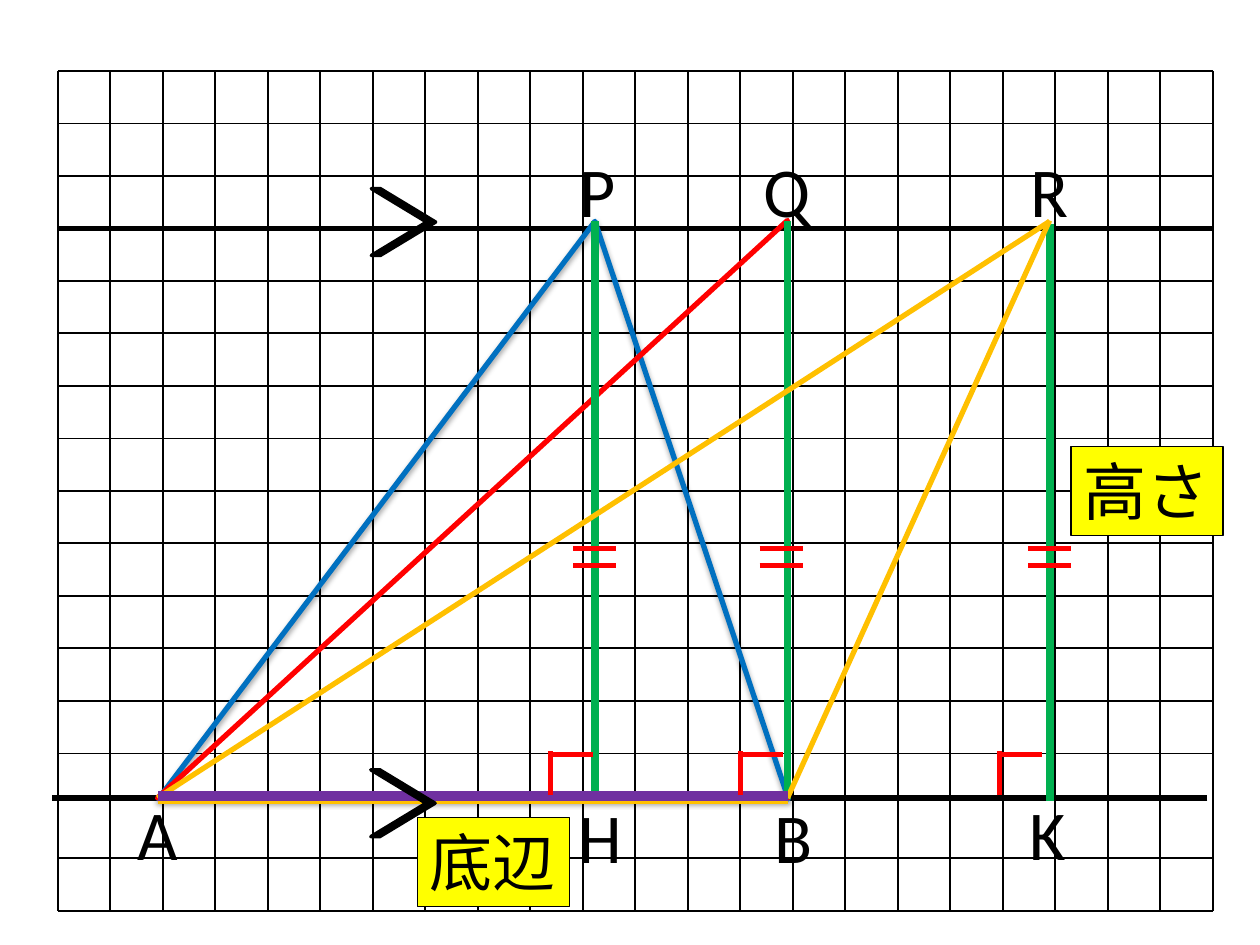
from typing import NamedTuple

from lxml.etree import SubElement
from pptx import Presentation
from pptx.dml.color import RGBColor
from pptx.enum.shapes import MSO_CONNECTOR as Connector, MSO_SHAPE as Preset
from pptx.enum.text import MSO_ANCHOR as Anchor, MSO_AUTO_SIZE as AutoSize, PP_ALIGN as Align
from pptx.oxml.ns import qn
from pptx.util import Pt

COLORS = {
    "black": "000000", "blue": "0070C0", "red": "FF0000", "green": "00B050",
    "orange": "FFC000", "purple": "7030A0", "yellow": "FFFF00",
}
FONT = "Calibri"
STEP, LEFT, TOP, COLUMNS, ROWS = 30, 33, 40.5, 22, 16
RIGHT, BOTTOM = LEFT + COLUMNS * STEP, TOP + ROWS * STEP
ORIGIN_COLUMN, PARALLEL_ROW, BASE_ROW = 2, 3, 14


class Segment(NamedTuple):
    x1: float
    y1: float
    x2: float
    y2: float
    color: str = "black"
    weight: float = 1


class Outline(NamedTuple):
    preset: Preset
    left: float
    top: float
    width: float
    height: float
    adjustment: float
    line: str
    weight: float
    fill: str | None = None
    shadowed: bool = False


class Vertex(NamedTuple):
    letter: str
    left: float
    top: float
    width: float


class Tag(NamedTuple):
    wording: str
    left: float
    top: float


def rgb(name: str) -> RGBColor:
    return RGBColor.from_string(COLORS[name])


def draw_segment(slide, segment: Segment) -> None:
    ends = [Pt(value) for value in segment[:4]]
    connector = slide.shapes.add_connector(Connector.STRAIGHT, *ends)
    connector.line.color.rgb = rgb(segment.color)
    connector.line.width = Pt(segment.weight)
    SubElement(connector._element.spPr, qn("a:effectLst"))


def add_shadow(shape) -> None:
    effects = shape._element.spPr.find(qn("a:effectLst"))
    shadow = SubElement(effects, qn("a:outerShdw"), blurRad=str(Pt(3.1)),
                        dist=str(Pt(1.6)), dir="5400000", rotWithShape="0")
    tint = SubElement(shadow, qn("a:srgbClr"), val=COLORS["black"])
    SubElement(tint, qn("a:alpha"), val="38000")


def draw_preset(slide, preset: Preset, box: tuple, line: str, weight: float, fill: str | None):
    shape = slide.shapes.add_shape(preset, *[Pt(value) for value in box])
    shape.shadow.inherit = False
    shape.line.color.rgb = rgb(line)
    shape.line.width = Pt(weight)
    if fill:
        shape.fill.solid()
        shape.fill.fore_color.rgb = rgb(fill)
    else:
        shape.fill.background()
    return shape


def draw_outline(slide, outline: Outline) -> None:
    shape = draw_preset(slide, outline.preset, outline[1:5], outline.line,
                        outline.weight, outline.fill)
    shape.adjustments[0] = outline.adjustment
    if outline.shadowed:
        add_shadow(shape)


def write(shape, wording: str, size: float) -> None:
    frame = shape.text_frame
    frame.word_wrap = False
    frame.auto_size = AutoSize.SHAPE_TO_FIT_TEXT
    frame.vertical_anchor = Anchor.TOP
    paragraph = frame.paragraphs[0]
    paragraph.text = wording
    paragraph.alignment = Align.LEFT
    paragraph.font.name = FONT
    paragraph.font.size = Pt(size)
    paragraph.font.color.rgb = rgb("black")


def draw_vertex(slide, vertex: Vertex) -> None:
    box = slide.shapes.add_textbox(Pt(vertex.left), Pt(vertex.top), Pt(vertex.width), Pt(55.74))
    write(box, vertex.letter, 40)


def draw_tag(slide, tag: Tag) -> None:
    box = draw_preset(slide, Preset.RECTANGLE, (tag.left, tag.top, 86.9, 50.9),
                      "black", 0.75, "yellow")
    write(box, tag.wording, 36)


def grid_segments() -> list[Segment]:
    columns = [LEFT + STEP * i for i in range(COLUMNS + 1)]
    rows = [TOP + STEP * i for i in range(ROWS + 1)]
    base_ticks = [Segment(x, 454.5, x, 466.5)
                  for i, x in enumerate(columns[1:16], 1) if i != ORIGIN_COLUMN]
    side_ticks = [Segment(87, y, 99, y)
                  for i, y in enumerate(rows[3:16], 3) if i != BASE_ROW]
    across = [Segment(RIGHT, y, LEFT, y, "black", 3 if i == PARALLEL_ROW else 1)
              for i, y in enumerate(rows) if i != BASE_ROW]
    down = [Segment(x, TOP, x, BOTTOM) for x in columns]
    return base_ticks + side_ticks + across + down + [Segment(690, 456, 30, 456, "black", 3)]


def equal_marks(center: float) -> list[Segment]:
    return [Segment(center - 12.25, y, center + 12.25, y, "red", 3) for y in (313.4, 323.2)]


def right_angle(left: float) -> list[Segment]:
    return [Segment(left, 431.2, left + 24.5, 431.2, "red", 3),
            Segment(left, 454.5, left, 429.3, "red", 3)]


TRIANGLES = [
    Outline(Preset.ISOSCELES_TRIANGLE, 90.5, 126.5, 360, 330, 0.693, "blue", 3, shadowed=True),
    Outline(Preset.ISOSCELES_TRIANGLE, 90, 126, 360, 330, 1, "red", 3),
]
CHEVRONS = [
    Outline(Preset.CHEVRON, left, top, 36.7, 38.2, 0.861, "black", 2, "black")
    for left, top in ((212.2, 107.8), (211.9, 439.9))
]
HEIGHTS = [
    Segment(x, top, x, top + 330, "green", 4.5)
    for x, top in ((340, 126.5), (450, 126.5), (599.8, 128))
]
SIDES = [
    Segment(90, 456, 599.8, 126.5, "orange", 3),
    Segment(599.8, 126, 450, 456, "orange", 3),
    Segment(90, 457.8, 450, 457.8, "orange", 3),
    Segment(90.5, 455, 450.5, 455, "purple", 6),
]
VERTICES = [
    Vertex("P", 324, 80.5, 35.3), Vertex("Q", 429.1, 80.5, 41.8), Vertex("R", 581.8, 80.5, 36.7),
    Vertex("A", 71.3, 448, 38.2), Vertex("B", 435.6, 450, 36.7),
]
FEET = [Vertex("H", 323.3, 450, 39.6), Vertex("K", 581, 448, 35.3)]
TAGS = [Tag("高さ", 612, 255), Tag("底辺", 238.5, 467.3)]


def main() -> None:
    """Build the slide of triangles that share a base and a height."""
    deck = Presentation()
    deck.slide_width, deck.slide_height = Pt(720), Pt(540)
    slide = deck.slides.add_slide(deck.slide_layouts[6])
    marks = [segment for center in (339.8, 446.4, 599.8) for segment in equal_marks(center)]
    angles = [segment for left in (314.6, 423.2, 571) for segment in right_angle(left)]
    for segment in grid_segments():
        draw_segment(slide, segment)
    for triangle in TRIANGLES:
        draw_outline(slide, triangle)
    for vertex in VERTICES:
        draw_vertex(slide, vertex)
    for segment in HEIGHTS + SIDES + marks + angles:
        draw_segment(slide, segment)
    for foot in FEET:
        draw_vertex(slide, foot)
    for chevron in CHEVRONS:
        draw_outline(slide, chevron)
    for tag in TAGS:
        draw_tag(slide, tag)
    deck.save("out.pptx")


if __name__ == "__main__":
    main()
